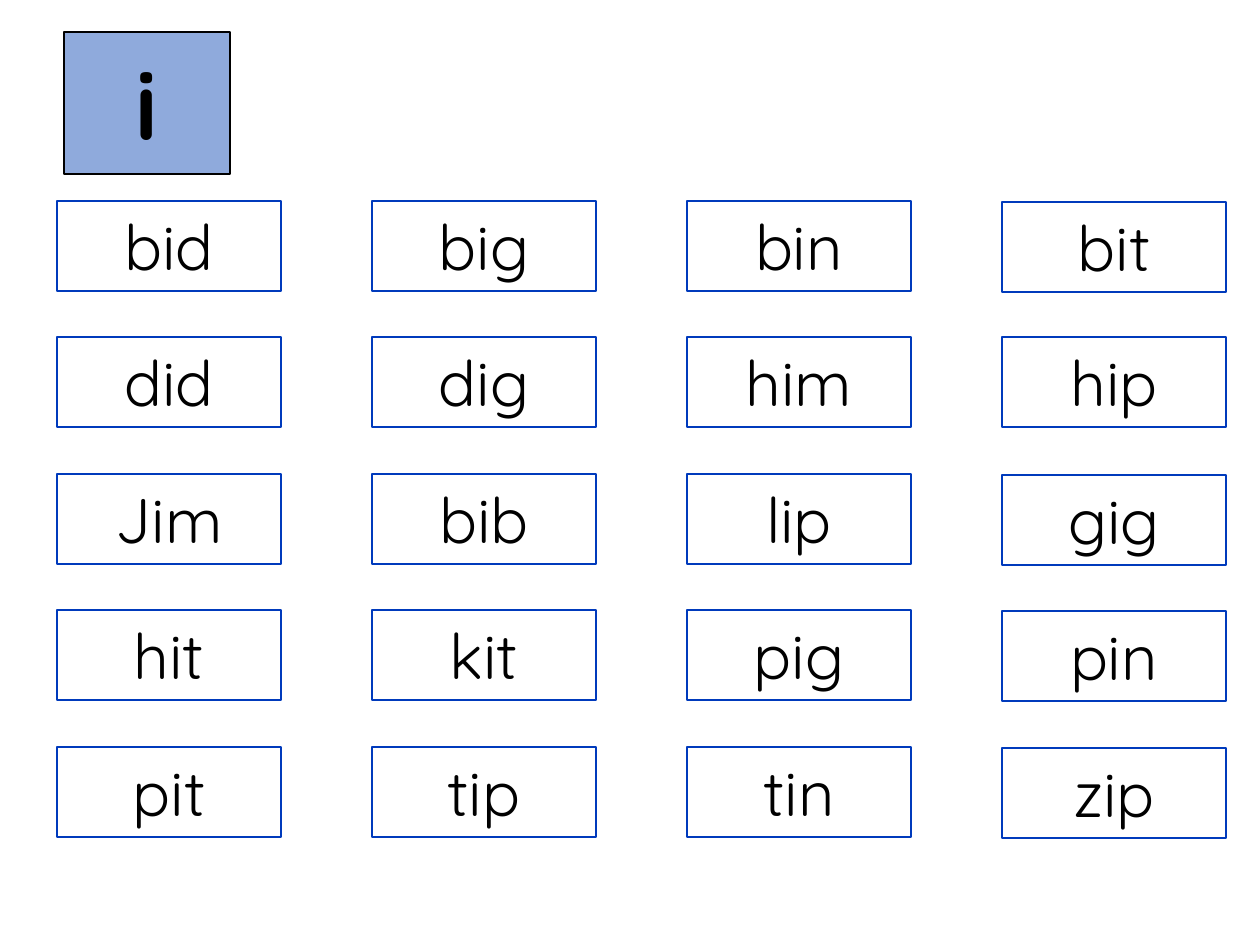
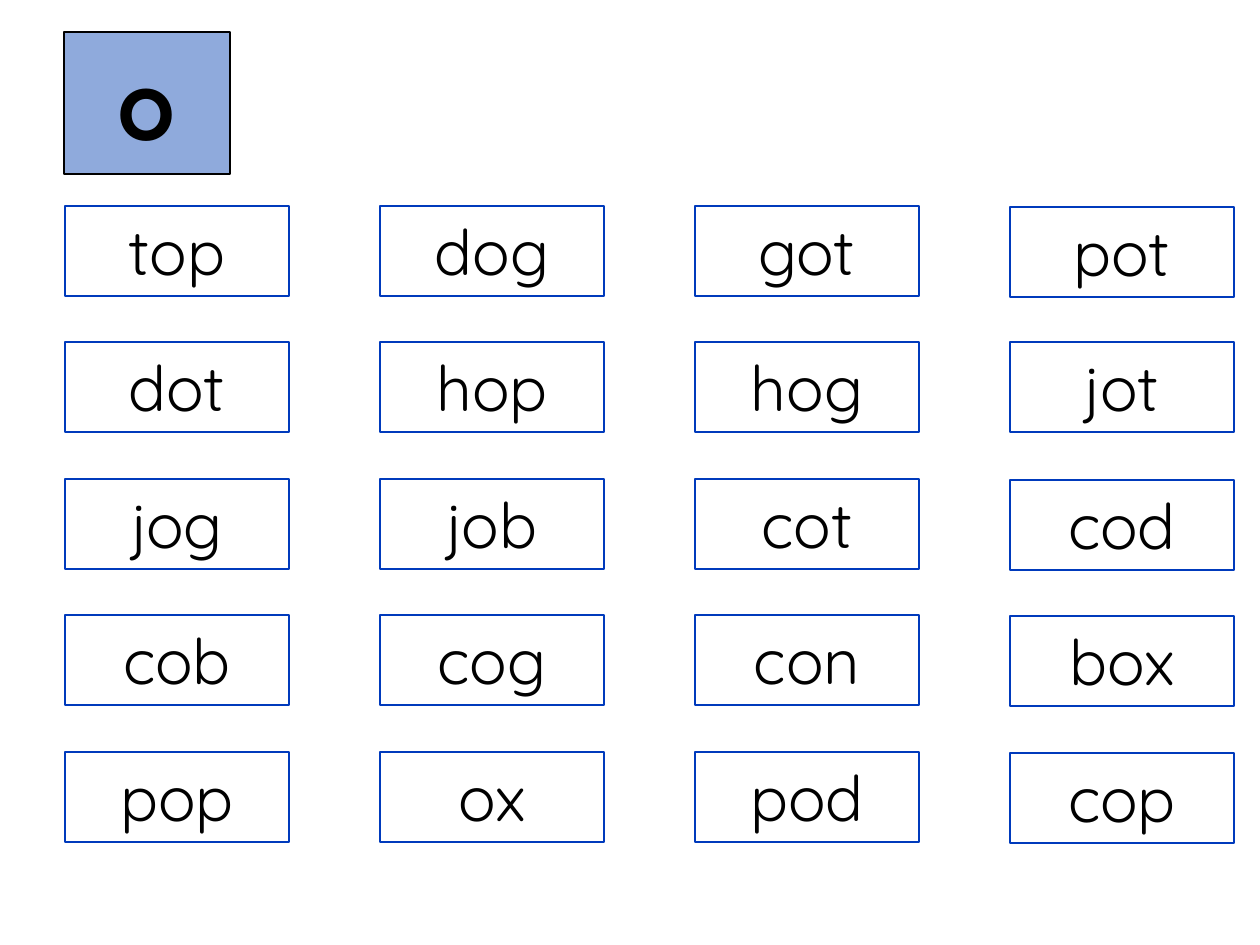
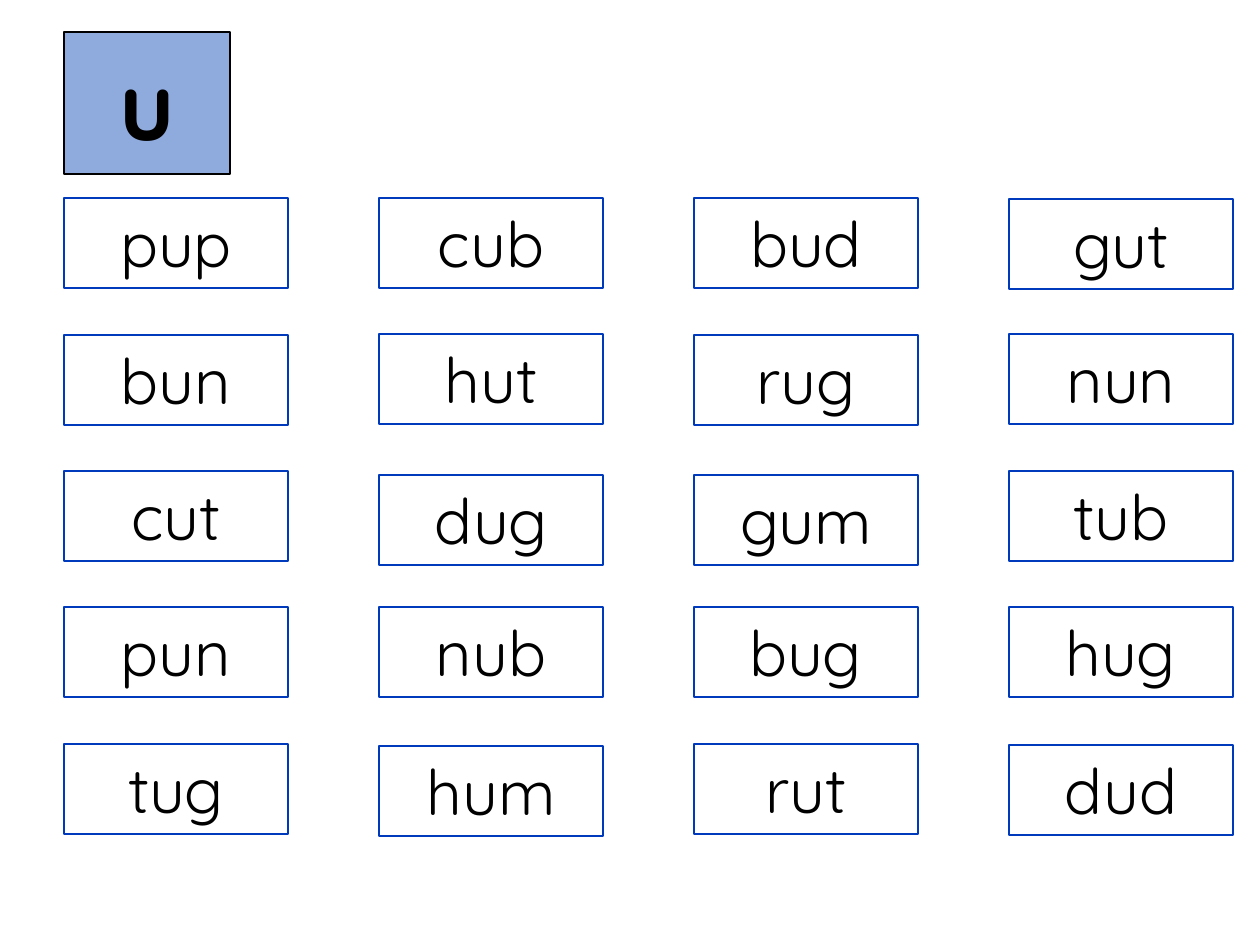
from dataclasses import dataclass, field

import pptx
import pptx.dml.color
import pptx.enum.text
import pptx.util

EMU_PER_PX = 914400 / 126
SLIDE_WIDTH, SLIDE_HEIGHT = 1260, 945
TITLE_ONLY_LAYOUT = 5

FONT = "Quicksand"
BLACK = "000000"
WORD_BORDER = "003ABC"
VOWEL_FILL = "8FAADC"

WORD_WIDTH, WORD_HEIGHT = 224, 90
COLUMN_PITCH = 315
TWO_ROW_PITCH = 273


@dataclass(frozen=True)
class Box:
    left: int
    top: int
    width: int
    height: int


@dataclass(frozen=True)
class VowelSheet:
    """A vowel with its word grid; drops lower single words by some px."""
    vowel: str
    left: int
    top: int
    rows: tuple[str, ...]
    drops: dict[str, int] = field(default_factory=dict)


VOWEL_BOX = Box(64, 32, 166, 142)

SHEETS = (
    VowelSheet("i", 57, 201, (
        "bid big bin bit",
        "did dig him hip",
        "Jim bib lip gig",
        "hit kit pig pin",
        "pit tip tin zip",
    ), {"bit": 1, "gig": 1, "pin": 1, "zip": 1}),
    VowelSheet("o", 65, 206, (
        "top dog got pot",
        "dot hop hog jot",
        "jog job cot cod",
        "cob cog con box",
        "pop ox pod cop",
    ), {"pot": 1, "cod": 1, "box": 1, "cop": 1}),
    VowelSheet("u", 64, 198, (
        "pup cub bud gut",
        "bun hut rug nun",
        "cut dug gum tub",
        "pun nub bug hug",
        "tug hum rut dud",
    ), {"gut": 1, "bun": 1, "rug": 1, "dug": 4, "gum": 4, "hum": 2, "dud": 1}),
)


def px(length: int) -> pptx.util.Emu:
    return pptx.util.Emu(round(length * EMU_PER_PX))


def color(hex_value: str) -> pptx.dml.color.RGBColor:
    return pptx.dml.color.RGBColor.from_string(hex_value)


def place(shape, box: Box) -> None:
    shape.left, shape.top = px(box.left), px(box.top)
    shape.width, shape.height = px(box.width), px(box.height)


def set_border(shape, hex_value: str, points: float) -> None:
    shape.line.color.rgb = color(hex_value)
    shape.line.width = pptx.util.Pt(points)


def set_text(shape, text: str, size: int, bold: bool = False) -> None:
    text_frame = shape.text_frame
    text_frame.text = text
    text_frame.word_wrap = True
    paragraph = text_frame.paragraphs[0]
    paragraph.alignment = pptx.enum.text.PP_ALIGN.CENTER
    font = paragraph.runs[0].font
    font.name = FONT
    font.size = pptx.util.Pt(size)
    font.bold = bold
    font.color.rgb = color(BLACK)


def draw_vowel(slide, vowel: str) -> None:
    title = slide.shapes.title
    place(title, VOWEL_BOX)
    title.fill.solid()
    title.fill.fore_color.rgb = color(VOWEL_FILL)
    set_border(title, BLACK, 1)
    set_text(title, vowel, 54, bold=True)
    title.text_frame.auto_size = pptx.enum.text.MSO_AUTO_SIZE.NONE
    title.text_frame.vertical_anchor = pptx.enum.text.MSO_ANCHOR.MIDDLE


def draw_word(slide, word: str, box: Box) -> None:
    word_box = slide.shapes.add_textbox(0, 0, 0, 0)
    place(word_box, box)
    set_border(word_box, WORD_BORDER, 0.75)
    set_text(word_box, word, 36)
    word_box.text_frame.auto_size = pptx.enum.text.MSO_AUTO_SIZE.SHAPE_TO_FIT_TEXT


def draw_sheet(presentation, sheet: VowelSheet) -> None:
    slide = presentation.slides.add_slide(presentation.slide_layouts[TITLE_ONLY_LAYOUT])
    draw_vowel(slide, sheet.vowel)
    for row, words in enumerate(sheet.rows):
        row_top = sheet.top + row * TWO_ROW_PITCH // 2
        for column, word in enumerate(words.split()):
            left = sheet.left + column * COLUMN_PITCH
            top = row_top + sheet.drops.get(word, 0)
            draw_word(slide, word, Box(left, top, WORD_WIDTH, WORD_HEIGHT))


def main() -> None:
    presentation = pptx.Presentation()
    presentation.slide_width = px(SLIDE_WIDTH)
    presentation.slide_height = px(SLIDE_HEIGHT)
    for sheet in SHEETS:
        draw_sheet(presentation, sheet)
    presentation.save("out.pptx")


if __name__ == "__main__":
    main()
